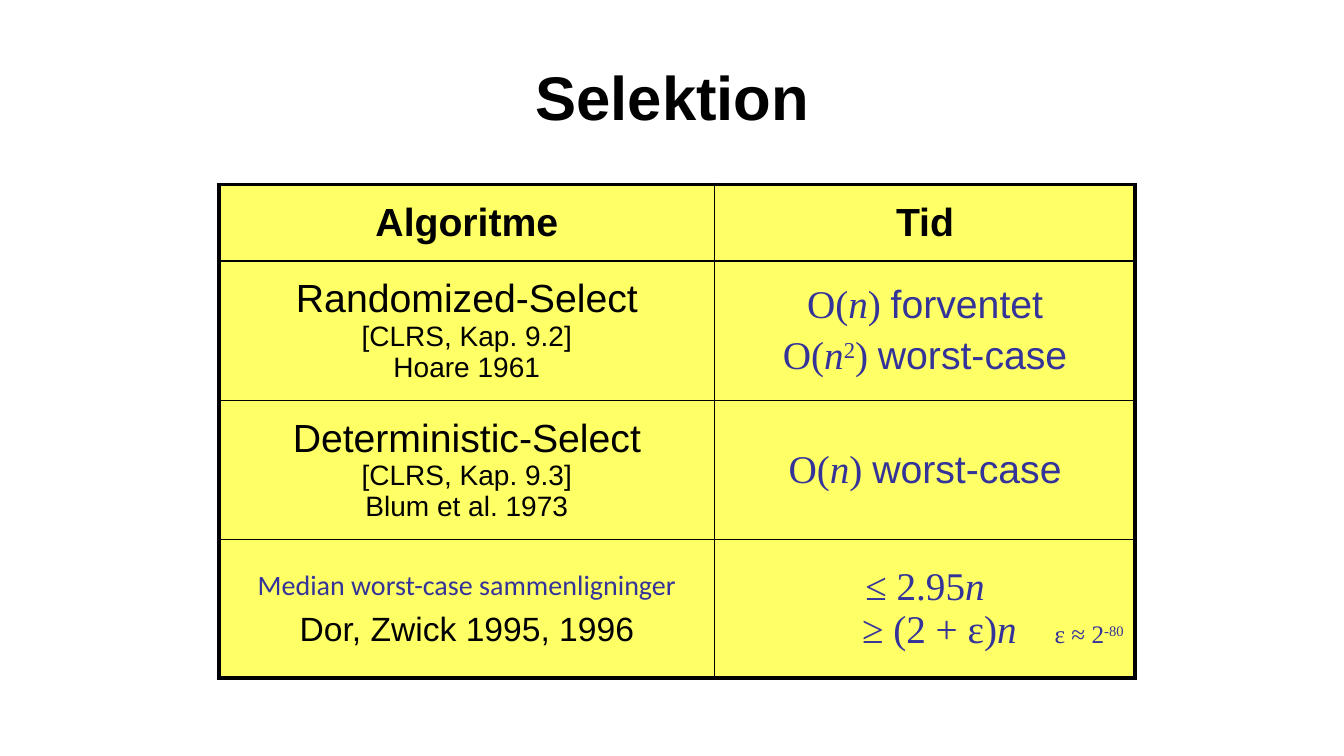
import lxml.etree
import pptx
import pptx.dml.color
import pptx.enum.text
import pptx.oxml.ns
import pptx.util

Inches = pptx.util.Inches
Pt = pptx.util.Pt
ALIGN = pptx.enum.text.PP_ALIGN
MIDDLE = pptx.enum.text.MSO_ANCHOR.MIDDLE
qn = pptx.oxml.ns.qn

BLACK, INDIGO, YELLOW = "000000", "333399", "FFFF66"
SANS, SERIF = "Arial", "Times New Roman"
COLUMN_WIDTHS = [4.92, 4.17]
ROW_HEIGHTS = [0.76, 1.38, 1.38, 1.38]


def color(hex_code):
    return pptx.dml.color.RGBColor.from_string(hex_code)


def add_text(paragraph, text, size=28, font=SANS, fill=BLACK, bold=False,
             italic=False, raised=False):
    run = paragraph.add_run()
    run.text = text
    run.font.size = Pt(size)
    run.font.name = font
    run.font.bold = bold
    run.font.italic = italic
    run.font.color.rgb = color(fill)
    if raised:
        run.font._element.set("baseline", "30000")


def math(text, **style):
    return text, dict(font=SERIF, fill=INDIGO, **style)


def words(text):
    return text, dict(fill=INDIGO)


def line(*runs, before=0, after=0, tabs=()):
    return dict(runs=runs, before=before, after=after, tabs=tabs)


def heading(text):
    return [line((text, dict(bold=True)), before=5.6)]


def algorithm(name, chapter, author):
    return [line((name, {})), line((chapter, dict(size=20))), line((author, dict(size=20)))]


def bound(case, power=None):
    exponent = [math(power, raised=True)] if power else []
    return line(math("O("), math("n", italic=True), *exponent, math(") "), words(case),
                before=5.6)


ROWS = [
    [heading("Algoritme"), heading("Tid")],
    [algorithm("Randomized-Select", "[CLRS, Kap. 9.2]", "Hoare 1961"),
     [bound("forventet"), bound("worst-case", power="2")]],
    [algorithm("Deterministic-Select", "[CLRS, Kap. 9.3]", "Blum et al. 1973"),
     [bound("worst-case")]],
    [[line(("Median worst-case sammenligninger", dict(size=20, font="Calibri", fill=INDIGO)),
           after=6),
      line(("Dor, Zwick 1995, 1996", dict(size=24)), after=6)],
     [line(math("≤ 2.95"), math("n", italic=True)),
      line(math("\t≥ (2 + ε)"), math("n", italic=True), math("\tε ≈ 2", size=18),
           math("-80", size=18, raised=True), tabs=(1.36, 3.27))]],
]


def set_tabs(paragraph, positions):
    tab_list = lxml.etree.SubElement(paragraph._p.get_or_add_pPr(), qn("a:tabLst"))
    for position in positions:
        lxml.etree.SubElement(tab_list, qn("a:tab"), pos=str(Inches(position)), algn="l")


def fill_cell(cell, lines):
    cell.fill.solid()
    cell.fill.fore_color.rgb = color(YELLOW)
    cell.vertical_anchor = MIDDLE
    frame = cell.text_frame
    for index, content in enumerate(lines):
        paragraph = frame.add_paragraph() if index else frame.paragraphs[0]
        paragraph.alignment = ALIGN.LEFT if content["tabs"] else ALIGN.CENTER
        paragraph.space_before = Pt(content["before"])
        paragraph.space_after = Pt(content["after"])
        if content["tabs"]:
            set_tabs(paragraph, content["tabs"])
        for text, style in content["runs"]:
            add_text(paragraph, text, **style)


def set_borders(cell, widths):
    properties = cell._tc.get_or_add_tcPr()
    for index, (side, width) in enumerate(zip("LRTB", widths)):
        border = lxml.etree.Element(qn("a:ln" + side), w=str(Pt(width)))
        solid = lxml.etree.SubElement(border, qn("a:solidFill"))
        lxml.etree.SubElement(solid, qn("a:srgbClr"), val=BLACK)
        properties.insert(index, border)


def place_title(slide, left, top, width, height):
    title = slide.shapes.title
    title.left, title.top = Inches(left), Inches(top)
    title.width, title.height = Inches(width), Inches(height)
    title.text_frame.vertical_anchor = MIDDLE
    paragraph = title.text_frame.paragraphs[0]
    paragraph.alignment = ALIGN.CENTER
    add_text(paragraph, "Selektion", size=44, bold=True)


def place_comparison(slide, left, top):
    last_row, last_column = len(ROWS) - 1, len(COLUMN_WIDTHS) - 1
    comparison = slide.shapes.add_table(
        len(ROWS), len(COLUMN_WIDTHS), Inches(left), Inches(top),
        Inches(sum(COLUMN_WIDTHS)), Inches(sum(ROW_HEIGHTS))).table
    comparison.first_row = comparison.horz_banding = False
    for column, width in zip(comparison.columns, COLUMN_WIDTHS):
        column.width = Inches(width)
    for r, height in enumerate(ROW_HEIGHTS):
        comparison.rows[r].height = Inches(height)
        for c, lines in enumerate(ROWS[r]):
            cell = comparison.cell(r, c)
            fill_cell(cell, lines)
            # Thick outer frame, thin inner rules
            outer = (c == 0, c == last_column, r == 0, r == last_row)
            set_borders(cell, [3 if edge else 1 for edge in outer])


def main():
    deck = pptx.Presentation()
    deck.slide_width, deck.slide_height = Inches(13.33), Inches(7.5)
    slide = deck.slides.add_slide(deck.slide_layouts[5])
    # Title
    place_title(slide, 2.17, 0.33, 9, 1.25)
    # Table of algorithms and running times
    place_comparison(slide, 2.17, 1.83)
    deck.save("out.pptx")


if __name__ == "__main__":
    main()
